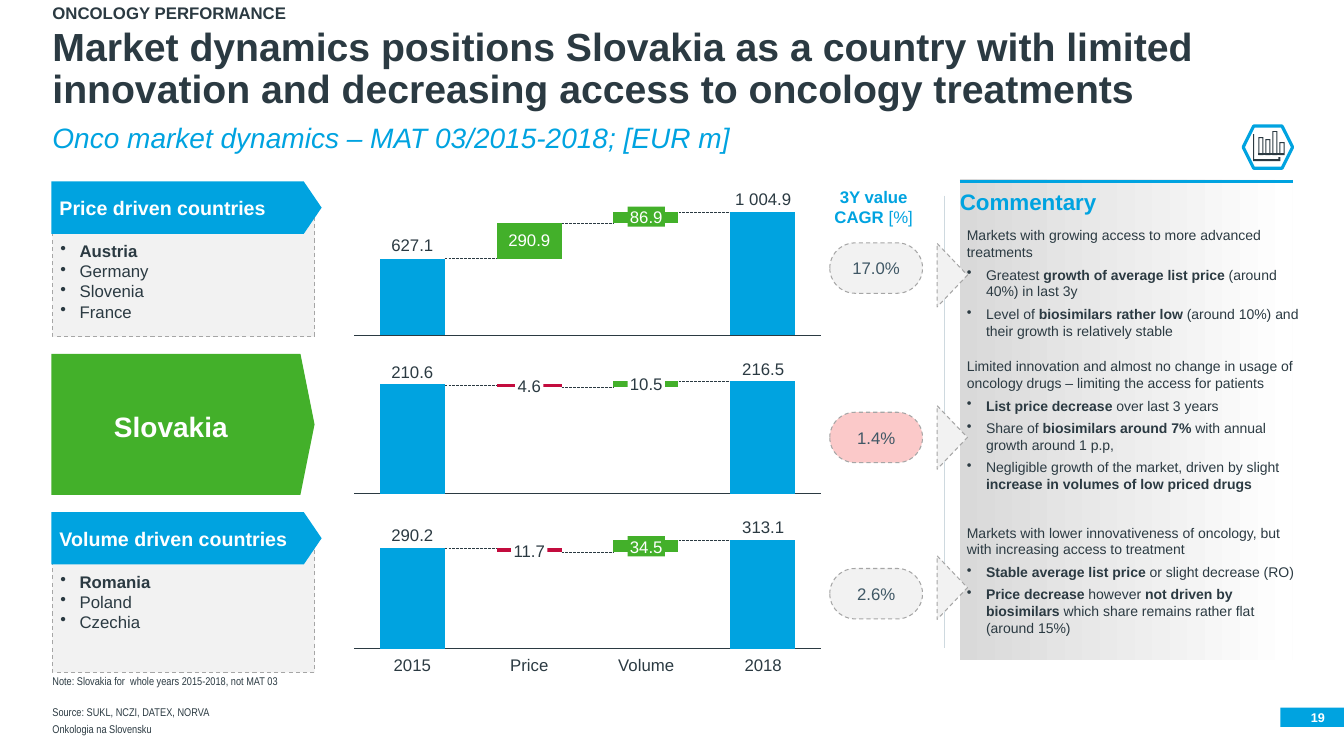
"""Builds the slide on oncology market dynamics by country group."""
from lxml import etree
from pptx import Presentation
from pptx.chart.data import CategoryChartData
from pptx.dml.color import RGBColor
from pptx.enum.chart import XL_CHART_TYPE as ChartType, XL_TICK_LABEL_POSITION as LabelPosition
from pptx.enum.chart import XL_TICK_MARK as TickMark
from pptx.enum.dml import MSO_LINE as Dash
from pptx.enum.shapes import MSO_CONNECTOR as Connector, MSO_SHAPE as Preset
from pptx.enum.text import MSO_ANCHOR as Anchor, MSO_AUTO_SIZE as AutoSize, PP_ALIGN as Align
from pptx.oxml import parse_xml
from pptx.oxml.ns import nsdecls, qn
from pptx.util import Pt

SCALE = 9144
COLORS = {
    "blue": "00A3E0", "green": "43B02A", "red": "C30C3E", "pink": "FBC9C9", "ink": "2B3A42",
    "slate": "3F5765", "white": "FFFFFF", "pale": "F2F2F2", "silver": "D9D9D9",
    "grey": "A6A6A6", "mist": "CED9DF",
}


def px(length):
    return round(length * SCALE)


def rgb(name):
    return RGBColor.from_string(COLORS[name])


class Board:
    def __init__(self, slide, font="Arial"):
        self.slide = slide
        self.shapes = slide.shapes
        self.font = font

    def fill_text(self, shape, text, size=12, color="ink", bold=False, italic=False, font=None,
                  align=Align.LEFT, anchor=Anchor.TOP, insets=(0, 0, 0, 0), wrap=True,
                  spacing=None, before=0):
        frame = shape.text_frame
        frame.auto_size = AutoSize.NONE
        frame.word_wrap = wrap
        frame.vertical_anchor = anchor
        frame.margin_left, frame.margin_top, frame.margin_right, frame.margin_bottom = map(px, insets)
        for index, line in enumerate(text.split("\n")):
            paragraph = frame.add_paragraph() if index else frame.paragraphs[0]
            paragraph.alignment = align
            paragraph.space_before = Pt(before if index else 0)
            if spacing:
                paragraph.line_spacing = spacing
            if line.startswith("•"):
                line = line[1:]
                properties = paragraph._p.get_or_add_pPr()
                properties.set("marL", str(px(19)))
                properties.set("indent", str(px(-19)))
                etree.SubElement(properties, qn("a:buChar")).set("char", "•")
            for part, words in enumerate(line.split("*")):
                if words:
                    run = paragraph.add_run()
                    run.text = words
                    run.font.name = font or self.font
                    run.font.size = Pt(size)
                    run.font.bold = bold != (part % 2 == 1)
                    run.font.italic = italic
                    run.font.color.rgb = rgb(color)

    def text(self, box, text, **style):
        self.fill_text(self.shapes.add_textbox(*map(px, box)), text, **style)

    def title(self, box, text, **style):
        shape = self.shapes.title
        shape.left, shape.top, shape.width, shape.height = map(px, box)
        self.fill_text(shape, text, **style)

    def paint(self, shape, fill, line=None, width=0.75, dash=None):
        shape.shadow.inherit = False
        shape.fill.solid()
        shape.fill.fore_color.rgb = rgb(fill)
        if line:
            shape.line.color.rgb = rgb(line)
            shape.line.width = Pt(width)
            shape.line.dash_style = dash
        else:
            shape.line.fill.background()

    def shape(self, preset, box, fill, adjust=None, **outline):
        shape = self.shapes.add_shape(preset, *map(px, box))
        self.paint(shape, fill, **outline)
        if adjust is not None:
            shape.adjustments[0] = adjust
        return shape

    def gradient(self, box, start, end):
        shape = self.shape(Preset.RECTANGLE, box, start)
        shape.fill.gradient()
        shape.fill.gradient_angle = 0
        for stop, color, position in zip(shape.fill.gradient_stops, (start, end), (0, 1)):
            stop.color.rgb = rgb(color)
            stop.position = position

    def line(self, x1, y1, x2, y2, color, width, dash=None):
        line = self.shapes.add_connector(Connector.STRAIGHT, *map(px, (x1, y1, x2, y2)))
        line.line.color.rgb = rgb(color)
        line.line.width = Pt(width)
        line.line.dash_style = dash
        etree.SubElement(line._element.spPr, qn("a:effectLst"))

    def outline(self, contours, fill):
        first, *others = contours
        builder = self.shapes.build_freeform(*first[0], scale=SCALE)
        builder.add_line_segments(first[1:], close=True)
        for contour in others:
            builder.move_to(*contour[0])
            builder.add_line_segments(contour[1:], close=True)
        self.paint(builder.convert_to_shape(), fill)

    def waterfall(self, box, bases, changes, colors, margin=9):
        data = CategoryChartData()
        data.categories = ["1", "2", "3", "4"]
        data.add_series("Series 1", bases)
        data.add_series("Series 2", (None, *changes, None))
        chart = self.shapes.add_chart(ChartType.COLUMN_STACKED, *map(px, box), data).chart
        chart.has_legend = chart.has_title = False
        chart.font.name, chart.font.size = self.font, Pt(10)
        chart.font.color.rgb = rgb("ink")
        plot = chart.plots[0]
        plot.gap_width, plot.overlap, plot.vary_by_categories = 80, 100, False
        values, categories = chart.value_axis, chart.category_axis
        values.minimum_scale, values.maximum_scale = 0, 100
        values.has_major_gridlines = values.visible = False
        categories.tick_label_position = LabelPosition.NONE
        categories.major_tick_mark = categories.minor_tick_mark = TickMark.NONE
        categories.format.line.color.rgb = rgb("ink")
        categories.format.line.width = Pt(0.75)
        base, change = plot.series
        base.format.fill.background()
        for series, point, color in ((base, 0, "blue"), (base, 3, "blue"),
                                     (change, 1, colors[0]), (change, 2, colors[1])):
            fill = series.points[point].format.fill
            fill.solid()
            fill.fore_color.rgb = rgb(color)
        area = chart._chartSpace.chart.plotArea
        for old in area.findall(qn("c:layout")):
            area.remove(old)
        width, height = box[2:]
        sizes = {"x": margin / width, "y": margin / height,
                 "w": 1 - 2 * margin / width, "h": 1 - 2 * margin / height}
        places = "".join(f'<c:{key} val="{value:.3f}"/>' for key, value in sizes.items())
        area.insert(0, parse_xml(
            f'<c:layout {nsdecls("c")}><c:manualLayout><c:layoutTarget val="inner"/>'
            f'<c:xMode val="edge"/><c:yMode val="edge"/>{places}</c:manualLayout></c:layout>'))


def rectangle(left, top, right, bottom):
    return [(left, top), (right, top), (right, bottom), (left, bottom)]


ROWS = [
    dict(box=(342, 201, 481, 141), bases=(62, 62, 91, 100), changes=(29, 9), colors=("green", "green"),
         links=(256, 221, 210), cagr=("17.0%", 241, "pale"), arrow=258,
         labels=[("627.1", 233, 46, None, "ink"), ("290.9", 228, 46, None, "white"),
                 ("86.9", 205, 37, "green", "white"), ("1 004.9", 187, 60, None, "ink")]),
    dict(box=(342, 369, 481, 130), bases=(97, 95, 95, 100), changes=(2, 5), colors=("red", "green"),
         links=(382, 384, 378), cagr=("1.4%", 409, "pink"), arrow=419,
         labels=[("210.6", 359, 46, None, "ink"), ("4.6", 373, 28, "white", "ink"),
                 ("10.5", 371, 37, "white", "ink"), ("216.5", 356, 46, None, "ink")]),
    dict(box=(342, 527, 481, 126), bases=(93, 89, 89, 100), changes=(4, 11), colors=("red", "green"),
         links=(544, 548, 536), cagr=("2.6%", 564, "pale"), arrow=568,
         labels=[("290.2", 521, 46, None, "ink"), ("11.7", 536, 36, "white", "ink"),
                 ("34.5", 532, 37, "green", "white"), ("313.1", 513, 46, None, "ink")]),
]
GROUPS = [
    ("Price driven countries", 180, 126, "•*Austria*\n•Germany\n•Slovenia\n•France"),
    ("Volume driven countries", 508, 131, "•*Romania*\n•Poland\n•Czechia"),
]
COMMENTS = [
    (217, 143, "Markets with growing access to more advanced treatments\n"
     "•Greatest *growth of average list price *(around 40%) in last 3y\n"
     "•Level of *biosimilars rather low *(around 10%) and their growth is relatively stable"),
    (347, 165, "Limited innovation and almost no change in usage of oncology drugs – limiting the access "
     "for patients\n•*List price decrease *over last 3 years\n"
     "•Share of *biosimilars around 7% *with annual growth around 1 p.p,\n"
     "•Negligible growth of the market, driven by slight *increase in volumes of low priced drugs*"),
    (512, 120, "Markets with lower innovativeness of oncology, but with increasing access to treatment\n"
     "•*Stable average list price *or slight decrease (RO)\n•*Price decrease *however "
     "*not driven by biosimilars* which share remains rather flat (around 15%)"),
]
FOOTNOTES = [(669, "Note: Slovakia for  whole years 2015-2018, not MAT 03"),
             (700, "Source: SUKL, NCZI, DATEX, NORVA"), (717, "Onkologia na Slovensku")]


def main():
    presentation = Presentation()
    presentation.slide_width, presentation.slide_height = px(1333), px(750)
    board = Board(presentation.slides.add_slide(presentation.slide_layouts[5]))
    dashed = dict(line="grey", dash=Dash.DASH)
    pad = (8, 8, 8, 8)

    board.text((52, 5, 1230, 18), "ONCOLOGY PERFORMANCE", bold=True, spacing=0.9)
    board.title((52, 26, 1230, 85), "Market dynamics positions Slovakia as a country with limited innovation "
                "and decreasing access to oncology treatments", size=28, bold=True, anchor=Anchor.BOTTOM, spacing=0.9)
    board.text((52, 123, 1230, 30), "Onco market dynamics – MAT 03/2015-2018; [EUR m]",
               size=20, color="blue", italic=True, spacing=0.9)
    for top, note in FOOTNOTES:
        board.text((52, top, 987, 13), note, size=8, font="Arial Narrow", anchor=Anchor.BOTTOM)
    number = board.shape(Preset.RECTANGLE, (1270, 702, 63, 19), "blue")
    board.fill_text(number, "19", size=9, color="white", bold=True, align=Align.RIGHT,
                    anchor=Anchor.MIDDLE, insets=(0, 0, 19, 0))

    board.gradient((952, 178, 330, 477), "silver", "white")
    board.text((952, 179, 330, 35), "Commentary", size=16, color="blue", bold=True, insets=(0, 8, 0, 0))
    board.line(952, 180, 1282, 180, "blue", 2.25)
    board.line(937, 194, 937, 643, "mist", 0.75)

    board.text((822, 177, 89, 48), "*3Y value*\n*CAGR *[%]", color="blue", align=Align.CENTER, insets=(0, 8, 0, 0))
    for row in ROWS:
        for column, y in enumerate(row["links"]):
            left = 441 + 116 * column
            board.line(left, y, left + 52, y, "ink", 0.25, Dash.LONG_DASH)
        board.waterfall(row["box"], row["bases"], row["changes"], row["colors"])
        for column, (label, top, width, fill, color) in enumerate(row["labels"]):
            box = (409 + 116 * column - width / 2, top, width, 20)
            style = dict(color=color, align=Align.CENTER, anchor=Anchor.MIDDLE, insets=(2, 0, 2, 0), wrap=False)
            if fill:
                board.fill_text(board.shape(Preset.RECTANGLE, box, fill), label, **style)
            else:
                board.text(box, label, **style)
        rate, top, fill = row["cagr"]
        pill = board.shape(Preset.ROUNDED_RECTANGLE, (823, top, 92, 50), fill, adjust=0.5, **dashed)
        board.fill_text(pill, rate, color="slate", align=Align.CENTER, anchor=Anchor.MIDDLE, insets=pad)
        arrow = board.shape(Preset.ISOSCELES_TRIANGLE, (913, row["arrow"], 63, 30), "pale", **dashed)
        arrow.rotation = 90
    for column, name in enumerate(("2015", "Price", "Volume", "2018")):
        board.text((379 + 116 * column, 650, 60, 20), name, align=Align.CENTER, wrap=False)

    for name, top, height, countries in GROUPS:
        panel = board.shape(Preset.RECTANGLE, (52, top + 28, 260, height), "pale", **dashed)
        board.fill_text(panel, countries, insets=(8, 31, 8, 8))
        banner = board.shape(Preset.PENTAGON, (51, top, 268, 52), "blue", adjust=0.34)
        board.fill_text(banner, name, size=14, color="white", bold=True, anchor=Anchor.MIDDLE, insets=pad)
    board.shape(Preset.PENTAGON, (51, 351, 261, 140), "green", adjust=0.1)
    board.text((63, 398, 213, 50), "Slovakia", size=20, color="white", bold=True,
               align=Align.CENTER, anchor=Anchor.MIDDLE, insets=pad)
    for top, height, comment in COMMENTS:
        board.text((959, top, 330, height), comment, size=10, before=4, insets=(0, 8, 0, 0))

    board.shape(Preset.HEXAGON, (1233, 125, 49, 42), "white", line="blue", width=2.25)
    board.outline([[(1268, 158), (1244, 158), (1244, 133), (1243, 133), (1243, 160),
                    (1270, 160), (1270, 156), (1268, 156)]], "ink")
    for column, top in enumerate((136, 138, 130, 141)):
        left = 1248 + 7 * column
        board.outline([rectangle(left, top, left + 5, 154),
                       rectangle(left + 1, top + 1, left + 4, 152)[::-1]], "ink")
    board.outline([rectangle(1248, 152, 1274, 154)], "ink")
    presentation.save("out.pptx")


if __name__ == "__main__":
    main()
